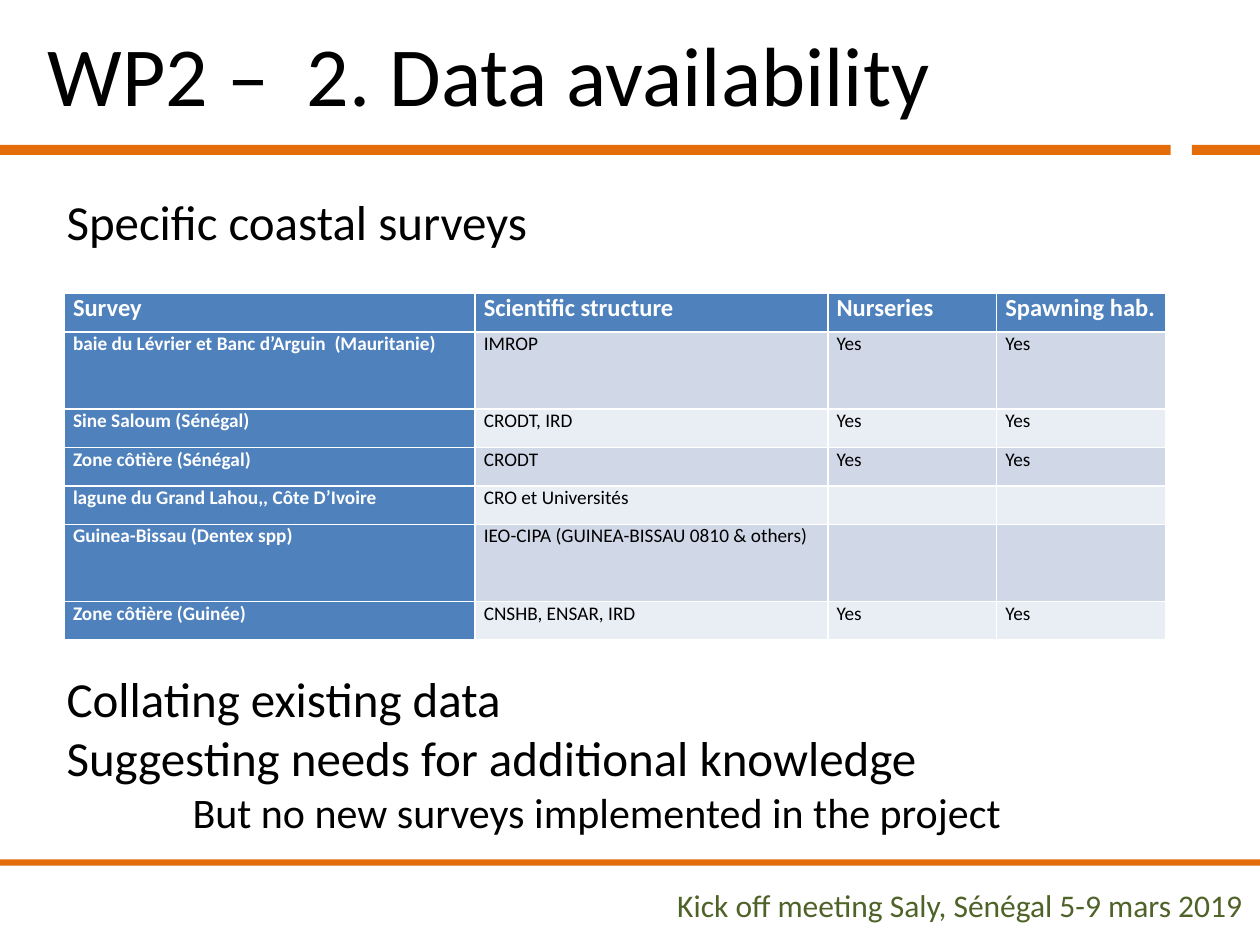
from pptx import Presentation
from pptx import util as u
from pptx.dml.color import RGBColor
from pptx.enum import shapes, text

COLUMNS, ROWS = 100, 75
ORANGE, GREEN, BLUE = "E46C0A", "4F6228", "4F81BD"
BLACK, WHITE = "000000", "FFFFFF"
BANDS = ("D0D8E8", "E9EDF4")

SURVEYS = [
    ("Survey", "Scientific structure", "Nurseries", "Spawning hab."),
    ("baie du Lévrier et Banc d’Arguin  (Mauritanie)", "IMROP", "Yes", "Yes"),
    ("Sine Saloum (Sénégal)", "CRODT, IRD", "Yes", "Yes"),
    ("Zone côtière (Sénégal)", "CRODT", "Yes", "Yes"),
    ("lagune du Grand Lahou,, Côte D’Ivoire", "CRO et Universités", "", ""),
    ("Guinea-Bissau (Dentex spp)", "IEO-CIPA (GUINEA-BISSAU 0810 & others)", "", ""),
    ("Zone côtière (Guinée)", "CNSHB, ENSAR, IRD", "Yes", "Yes"),
]


def color(value):
    return RGBColor.from_string(value)


class SlideBuilder:
    """Places elements on a grid of COLUMNS by ROWS cells."""

    font_name = "Calibri"

    def __init__(self, presentation):
        self.slide = presentation.slides.add_slide(presentation.slide_layouts[6])
        self.column = presentation.slide_width / COLUMNS
        self.row = presentation.slide_height / ROWS

    def box(self, left, top, width, height):
        return (round(left * self.column), round(top * self.row),
                round(width * self.column), round(height * self.row))

    def style(self, paragraph, size, fill, bold=False):
        font = paragraph.font
        font.name, font.size, font.bold = self.font_name, u.Pt(size), bold
        font.color.rgb = color(fill)

    def bar(self, *place):
        shape = self.slide.shapes.add_shape(shapes.MSO_SHAPE.RECTANGLE, *self.box(*place))
        shape.shadow.inherit = False
        shape.fill.solid()
        shape.fill.fore_color.rgb = color(ORANGE)
        shape.line.fill.background()

    def textbox(self, place, lines, fill=BLACK, align=text.PP_ALIGN.LEFT):
        """Lines are (words, size, space before in points, indent in columns)."""
        frame = self.slide.shapes.add_textbox(*self.box(*place)).text_frame
        frame.word_wrap = True
        frame.auto_size = text.MSO_AUTO_SIZE.SHAPE_TO_FIT_TEXT
        for index, (words, size, space, indent) in enumerate(lines):
            paragraph = frame.add_paragraph() if index else frame.paragraphs[0]
            paragraph.text = words
            paragraph.alignment = align
            if space:
                paragraph.space_before = u.Pt(space)
            if indent:
                paragraph._p.get_or_add_pPr().set("marL", str(round(indent * self.column)))
            self.style(paragraph, size, fill)

    def table(self, place, records, widths, heights):
        table = self.slide.shapes.add_table(
            len(records), len(widths), *self.box(*place)).table
        table.first_col = True
        for column, width in zip(table.columns, widths):
            column.width = round(width * self.column)
        for row, height in zip(table.rows, heights):
            row.height = round(height * self.row)
        for i, record in enumerate(records):
            for j, words in enumerate(record):
                heading = i == 0 or j == 0
                self.cell(table.cell(i, j), words, 11 if i else 14,
                          BLUE if heading else BANDS[(i - 1) % 2], heading)

    def cell(self, cell, words, size, fill, heading):
        cell.margin_left = cell.margin_right = u.Inches(0.07)
        cell.margin_top = cell.margin_bottom = 0
        cell.fill.solid()
        cell.fill.fore_color.rgb = color(fill)
        paragraph = cell.text_frame.paragraphs[0]
        paragraph.text = words
        paragraph.alignment = text.PP_ALIGN.JUSTIFY
        self.style(paragraph, size, WHITE if heading else BLACK, heading)


def main():
    presentation = Presentation()
    presentation.slide_width, presentation.slide_height = u.Inches(10), u.Inches(7.5)
    builder = SlideBuilder(presentation)

    builder.bar(0, 11.5, 92.9, 0.8)
    builder.bar(94.6, 11.5, 5.4, 0.8)
    builder.bar(0, 68.2, 100, 0.5)
    builder.textbox((31.1, 69.8, 68.5, 4),
                    [("Kick off meeting Saly, Sénégal 5-9 mars 2019", 18, 0, 0)],
                    GREEN, text.PP_ALIGN.RIGHT)
    builder.textbox((4.3, 14.7, 82.6, 52.2), [
        ("Specific coastal surveys", 28, 0, 0),
        ("Collating existing data", 28, 239, 0),
        ("Suggesting needs for additional knowledge", 28, 0, 0),
        ("But no new surveys implemented in the project", 24, 0, 10),
    ])
    builder.textbox((2.8, 1.3, 77.2, 9.1), [("WP2 –  2. Data availability", 48, 0, 0)])
    single, double = 3.05, 6.13
    builder.table((5.1, 23.3, 87.4, 27.6), SURVEYS, (32.6, 28, 13.4, 13.4),
                  (single, double, single, single, single, double, single))
    presentation.save("out.pptx")


if __name__ == "__main__":
    main()
